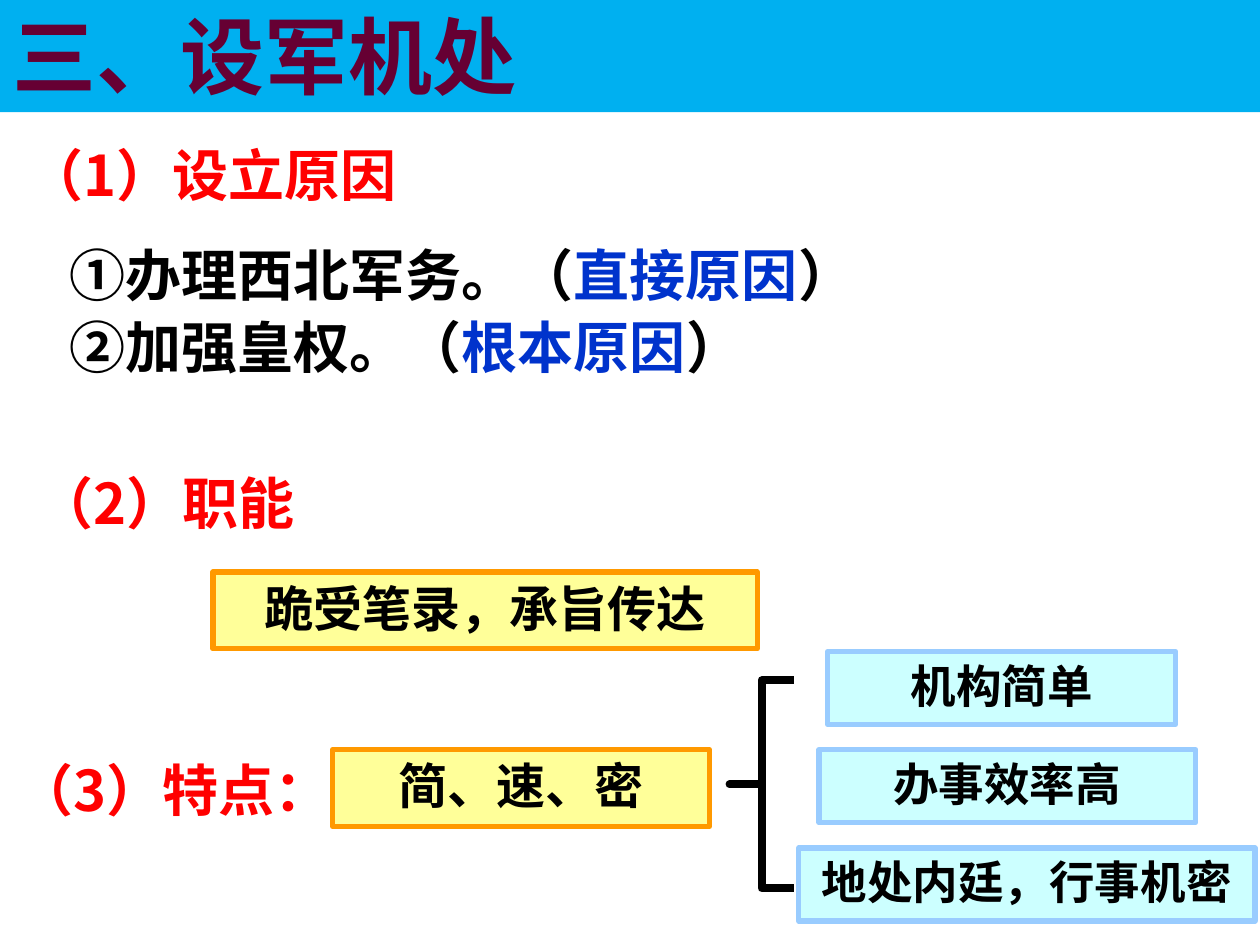
from pptx import Presentation
from pptx.dml.color import RGBColor
from pptx.enum.shapes import MSO_SHAPE as Shape
from pptx.enum.text import MSO_ANCHOR as Anchor, MSO_AUTO_SIZE as AutoSize, PP_ALIGN as Align
from pptx.oxml.ns import qn
from pptx.util import Inches, Pt
from lxml.etree import SubElement

SANS, SERIF = "Noto Sans CJK SC", "Times New Roman"
BLACK, RED, BLUE = "000000", "FF0000", "0033CC"
YELLOW, ORANGE = "FFFF99", "FF9900"
PALE_CYAN, PALE_BLUE = "CCFFFF", "99CCFF"


def color(value):
    return RGBColor.from_string(value)


def place(shape, left, top, width, height):
    shape.left, shape.top = Inches(left), Inches(top)
    shape.width, shape.height = Inches(width), Inches(height)


def format_paragraph(paragraph, size, font_name, font_color, align=Align.LEFT):
    paragraph.alignment = align
    font = paragraph.font
    font.size, font.name, font.bold = Pt(size), font_name, True
    font.color.rgb = color(font_color)
    if font_name == SANS:
        properties = paragraph._p.pPr.find(qn("a:defRPr"))
        SubElement(properties, qn("a:ea"), typeface=font_name)


def add_title(slide, text):
    title = slide.shapes.title
    place(title, 0, -0.02, 10, 0.91)
    title.fill.solid()
    title.fill.fore_color.rgb = color("00B0F0")
    frame = title.text_frame
    frame.text = text
    frame.auto_size = AutoSize.NONE
    frame.vertical_anchor = Anchor.MIDDLE
    format_paragraph(frame.paragraphs[0], 48, SANS, "660033")


def add_text_frame(slide, *box):
    frame = slide.shapes.add_textbox(*map(Inches, box)).text_frame
    frame.word_wrap = True
    frame.auto_size = AutoSize.SHAPE_TO_FIT_TEXT
    return frame


def add_heading(slide, text, *box):
    paragraph = add_text_frame(slide, *box).paragraphs[0]
    paragraph.text = text
    format_paragraph(paragraph, 32, SANS, RED)


def add_reasons(slide, reasons, *box):
    frame = add_text_frame(slide, *box)
    frame.margin_left = Inches(0.2)
    for index, (reason, kind) in enumerate(reasons):
        paragraph = frame.add_paragraph() if index else frame.paragraphs[0]
        if index:
            paragraph.line_spacing = 0.8
            paragraph.space_before = Pt(10)
        for text, run_color in ((reason + "（", BLACK), (kind, BLUE), ("）", BLACK)):
            run = paragraph.add_run()
            run.text = text
            run.font.color.rgb = color(run_color)
        format_paragraph(paragraph, 32, SANS, BLACK)


def add_box(slide, text, size, fill, line, *box):
    shape = slide.shapes.add_shape(Shape.RECTANGLE, *map(Inches, box))
    shape.shadow.inherit = False
    shape.fill.solid()
    shape.fill.fore_color.rgb = color(fill)
    shape.line.color.rgb = color(line)
    shape.line.width = Pt(3)
    frame = shape.text_frame
    frame.text = text
    frame.word_wrap = True
    frame.auto_size = AutoSize.SHAPE_TO_FIT_TEXT
    frame.vertical_anchor = Anchor.TOP
    format_paragraph(frame.paragraphs[0], size, SERIF, BLACK, Align.CENTER)


def add_brace(slide, *box):
    brace = slide.shapes.add_shape(Shape.LEFT_BRACE, *map(Inches, box))
    brace.adjustments[0], brace.adjustments[1] = 0, 0.5
    brace.shadow.inherit = False
    brace.fill.background()
    brace.line.color.rgb = color(BLACK)
    brace.line.width = Pt(4.5)


def main():
    presentation = Presentation()
    presentation.slide_width, presentation.slide_height = Inches(10), Inches(7.5)
    slide = presentation.slides.add_slide(presentation.slide_layouts[5])
    add_title(slide, "三、设军机处")

    # Reasons for founding
    add_heading(slide, "（1）设立原因", 0.12, 1.07, 4.09, 0.63)
    reasons = [("①办理西北军务。", "直接原因"), ("②加强皇权。", "根本原因")]
    add_reasons(slide, reasons, 0.35, 1.86, 9.45, 1.33)

    # Functions
    add_heading(slide, "（2）职能", 0.2, 3.67, 3.62, 0.63)
    add_box(slide, "跪受笔录，承旨传达", 28, YELLOW, ORANGE, 1.69, 4.54, 4.32, 0.61)

    # Features, with a brace opening to their explanations
    add_heading(slide, "（3）特点：", 0.04, 5.95, 3.23, 0.64)
    add_box(slide, "简、速、密", 28, YELLOW, ORANGE, 2.64, 5.95, 2.99, 0.61)
    add_brace(slide, 5.79, 5.4, 0.51, 1.65)
    features = [("机构简单", 6.57, 2.76), ("办事效率高", 6.5, 2.99),
                ("地处内廷，行事机密", 6.34, 3.62)]
    for row, (text, left, width) in enumerate(features):
        top = 5.17 + row * 0.78
        add_box(slide, text, 26, PALE_CYAN, PALE_BLUE, left, top, width, 0.58)

    presentation.save("out.pptx")


if __name__ == "__main__":
    main()
